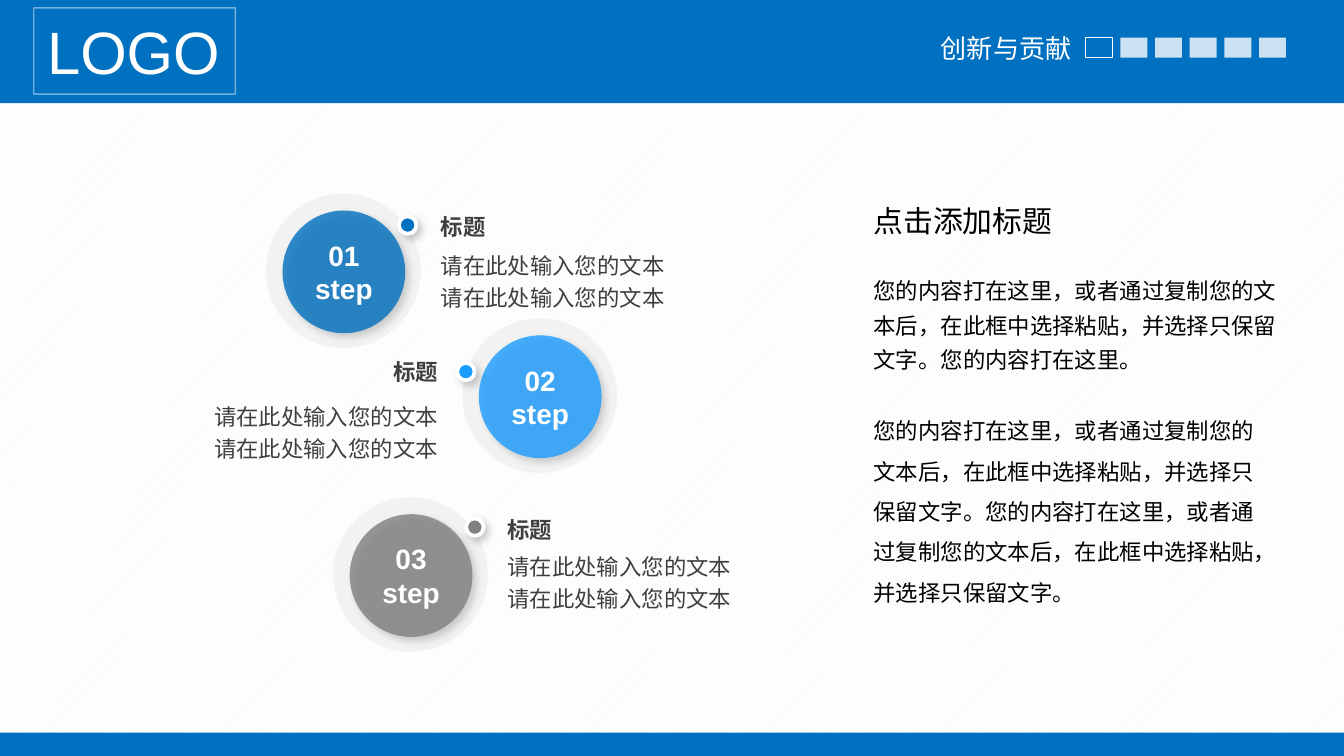
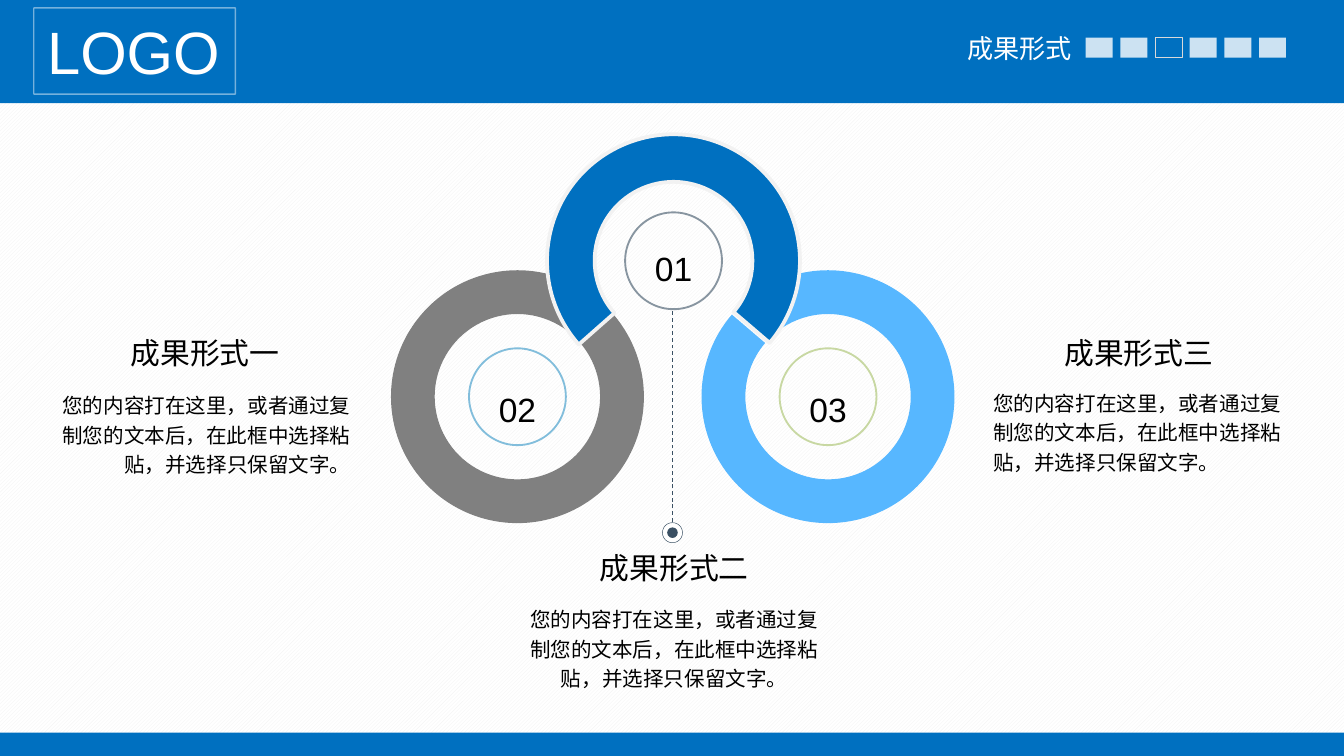
from lxml.etree import SubElement
from pptx import Presentation
from pptx.dml.color import RGBColor
from pptx.enum.dml import MSO_LINE, MSO_PATTERN
from pptx.enum.shapes import MSO_CONNECTOR, MSO_SHAPE as Shape
from pptx.enum.text import MSO_ANCHOR as Anchor, MSO_AUTO_SIZE as AutoSize, PP_ALIGN as Align
from pptx.oxml.ns import qn
from pptx.util import Cm, Pt

BLUE = RGBColor(0x00, 0x70, 0xC0)
BRIGHT_BLUE = RGBColor(0x1B, 0x9D, 0xFF)
LIGHT_BLUE = RGBColor(0x57, 0xB7, 0xFF)
TEAL = RGBColor(0x31, 0x94, 0xC6)
GREEN = RGBColor(0xA5, 0xC0, 0x67)
SLATE = RGBColor(0x3A, 0x50, 0x63)
GRAY = RGBColor(0x80, 0x80, 0x80)
PALE = RGBColor(0xF2, 0xF2, 0xF2)
SILVER = RGBColor(0xD9, 0xD9, 0xD9)
TEXT_GRAY = RGBColor(0x3D, 0x3F, 0x41)
WHITE = RGBColor(0xFF, 0xFF, 0xFF)
BLACK = RGBColor(0x00, 0x00, 0x00)
FONT = "Arial"
WIDTH, HEIGHT = 25.4, 14.29


def write(shape, text, size=12, color=BLACK, bold=False, align=Align.LEFT, anchor=Anchor.TOP,
          spacing=1.0, before=0, margins=(0.2, 0.1), wrap=True, grow=False):
    """Fill a shape with text, one paragraph for each line."""
    frame = shape.text_frame
    frame.text = text
    frame.word_wrap = wrap
    frame.auto_size = AutoSize.SHAPE_TO_FIT_TEXT if grow else AutoSize.NONE
    frame.vertical_anchor = anchor
    frame.margin_left = frame.margin_right = Cm(margins[0])
    frame.margin_top = frame.margin_bottom = Cm(margins[1])
    for paragraph in frame.paragraphs:
        paragraph.alignment = align
        paragraph.line_spacing = spacing
        paragraph.space_before = Pt(before)
        font = paragraph.runs[0].font
        font.name, font.size, font.bold = FONT, Pt(size), bold
        font.color.rgb = color


def draw(slide, kind, box, fill=None, line=None, line_width=1, opacity=100, shadow=False):
    """Add a preset shape; opacity applies to its fill, or to its line if it has no fill."""
    shape = slide.shapes.add_shape(kind, *map(Cm, box))
    shape.shadow.inherit = False
    if fill is None:
        shape.fill.background()
    else:
        shape.fill.solid()
        shape.fill.fore_color.rgb = fill
    if line is None:
        shape.line.fill.background()
    else:
        shape.line.color.rgb = line
        shape.line.width = Pt(line_width)
    properties = shape.element.spPr
    if opacity < 100:
        color = next(properties.iter(qn("a:srgbClr")))
        SubElement(color, qn("a:alpha"), val=str(opacity * 1000))
    if shadow:
        outer = SubElement(properties.find(qn("a:effectLst")), qn("a:outerShdw"),
                           blurRad=str(Pt(4)), dist=str(Pt(3)), dir="2700000")
        color = SubElement(outer, qn("a:srgbClr"), val="000000")
        SubElement(color, qn("a:alpha"), val="20000")
    return shape


presentation = Presentation()
presentation.slide_width, presentation.slide_height = Cm(WIDTH), Cm(HEIGHT)
master = presentation.slide_master
background = master.background.fill
background.patterned()
background.pattern = MSO_PATTERN.LIGHT_UPWARD_DIAGONAL
background.fore_color.rgb, background.back_color.rgb = PALE, WHITE

# Header shared by both slides
slides = []
for section, active_marker, marker_line in [("创新与贡献", 0, WHITE), ("成果形式", 2, SILVER)]:
    slide = presentation.slides.add_slide(presentation.slide_layouts[5])
    slides.append(slide)
    title = slide.shapes.title
    title_width = 0.5 * (len(section) + 1)
    title.left, title.top = Cm(20.53 - title_width), Cm(0.48)
    title.width, title.height = Cm(title_width), Cm(0.86)
    write(title, section, size=14, color=WHITE, margins=(0.25, 0.13), wrap=False, grow=True)
    for index in range(6):
        box = (20.52 + 0.655 * index, 0.71, 0.51, 0.38)
        if index == active_marker:
            draw(slide, Shape.RECTANGLE, box, line=marker_line, line_width=0.5)
        else:
            draw(slide, Shape.RECTANGLE, box, fill=WHITE, opacity=80)
    logo = draw(slide, Shape.RECTANGLE, (0.64, 0.15, 3.81, 1.63),
                line=WHITE, line_width=0.75, opacity=46)
    write(logo, "LOGO", size=32, color=WHITE, margins=(0.25, 0.13), wrap=False, grow=True)

steps_slide, results_slide = slides

# The two bands belong to the master, behind everything else
for top, height in [(0, 1.95), (13.85, 0.44)]:
    band = draw(steps_slide, Shape.RECTANGLE, (0, top, WIDTH, height), fill=BLUE)
    master.shapes.element.insert(2, band.element)

# Slide 1: three steps and a text column
# number, colour, halo left and top, dot left and top, text edge, heading top, body top, alignment
steps = [
    ("01", BLUE, 5.03, 3.66, 7.54, 4.09, 8.15, 3.96, 4.57, Align.LEFT),
    ("02", BRIGHT_BLUE, 8.74, 6.02, 8.64, 6.86, 8.46, 6.71, 7.42, Align.RIGHT),
    ("03", GRAY, 6.3, 9.4, 8.81, 9.8, 9.41, 9.7, 10.26, Align.LEFT),
]
for number, color, left, top, dot_left, dot_top, edge, heading_top, body_top, align in steps:
    draw(steps_slide, Shape.OVAL, (left, top, 2.92, 2.92), fill=PALE)
    disc = draw(steps_slide, Shape.OVAL, (left + 0.31, top + 0.32, 2.32, 2.32),
                fill=color, opacity=80, shadow=True)
    write(disc, f"{number}\nstep", size=15, color=WHITE, bold=True, align=Align.CENTER,
          anchor=Anchor.MIDDLE, margins=(0.18, 0.1))
    draw(steps_slide, Shape.OVAL, (dot_left, dot_top, 0.33, 0.33),
         fill=color, line=WHITE, line_width=2, shadow=True)
    for text, box_top, width, height, text_format in [
        ("标题", heading_top, 6.07, 0.64, {"bold": True, "anchor": Anchor.MIDDLE}),
        ("请在此处输入您的文本\n请在此处输入您的文本", body_top, 8.31, 1.37, {"spacing": 1.2}),
    ]:
        box_left = edge - width if align == Align.RIGHT else edge
        box = steps_slide.shapes.add_textbox(*map(Cm, (box_left, box_top, width, height)))
        write(box, text, color=TEXT_GRAY, align=align, margins=(0.18, 0.1), **text_format)

sentence = "您的内容打在这里，或者通过复制您的文本后，在此框中选择粘贴，并选择只保留文字。"
for text, top, width, height, size, spacing in [
    ("点击添加标题", 3.73, 3.99, 0.89, 16, 1.0),
    (sentence + "您的内容打在这里。", 4.98, 8.41, 2.87, 12, 1.3),
    (sentence * 2, 7.54, 8.0, 4.83, 12, 1.5),
]:
    box = steps_slide.shapes.add_textbox(*map(Cm, (16.31, top, width, height)))
    write(box, text, size=size, spacing=spacing, grow=True)

# Slide 2: three linked rings
RING, CIRCLE = 4.78, 1.83
# number, left, top, colour, outline, start and end in degrees, thickness, circle line, text drop
rings = [
    ("02", 7.39, 5.11, GRAY, None, 319.5, 314, 0.173, TEAL, 0.33),
    ("03", 13.26, 5.11, LIGHT_BLUE, None, 226, 220.5, 0.173, GREEN, 0.33),
    ("01", 10.34, 2.54, BLUE, PALE, 138.5, 40.5, 0.188, SLATE, 0.23),
]
for number, left, top, color, outline, start, end, thickness, circle_line, drop in rings:
    ring = draw(results_slide, Shape.BLOCK_ARC, (left, top, RING, RING),
                fill=color, line=outline, line_width=2)
    # Angle adjustments count 0.6 to the degree
    for index, value in enumerate((start * 0.6, end * 0.6, thickness)):
        ring.adjustments[index] = value
    circle_left, circle_top = left + (RING - CIRCLE) / 2, top + (RING - CIRCLE) / 2
    box = results_slide.shapes.add_textbox(
        *map(Cm, (circle_left, circle_top + drop, CIRCLE, 1.35)))
    write(box, number, size=18, align=Align.CENTER, spacing=1.4, margins=(0.13, 0.13), grow=True)
    draw(results_slide, Shape.OVAL, (circle_left, circle_top, CIRCLE, CIRCLE),
         line=circle_line, opacity=60)

pointer = results_slide.shapes.add_connector(
    MSO_CONNECTOR.STRAIGHT, *map(Cm, (12.71, 9.86, 12.71, 5.84)))
pointer.line.color.rgb = SLATE
pointer.line.width = Pt(0.5)
pointer.line.dash_style = MSO_LINE.DASH
SubElement(pointer.element.spPr, qn("a:effectLst"))
draw(results_slide, Shape.OVAL, (12.52, 9.88, 0.38, 0.38), fill=WHITE, line=SLATE, line_width=0.25)
draw(results_slide, Shape.OVAL, (12.61, 9.97, 0.2, 0.2), fill=SLATE)

for heading, left, heading_top, body_top, align in [
    ("成果形式一", 0.99, 6.2, 7.21, Align.RIGHT),
    ("成果形式二", 9.86, 10.26, 11.25, Align.CENTER),
    ("成果形式三", 18.64, 6.2, 7.16, Align.LEFT),
]:
    box = results_slide.shapes.add_textbox(*map(Cm, (left, heading_top, 5.77, 0.94)))
    write(box, heading, size=16, align=Align.CENTER, before=2, margins=(0.13, 0.13), grow=True)
    box = results_slide.shapes.add_textbox(*map(Cm, (left, body_top, 5.77, 1.96)))
    write(box, sentence, size=11, align=align, spacing=1.2, before=1,
          margins=(0.13, 0.13), grow=True)

presentation.save("out.pptx")
